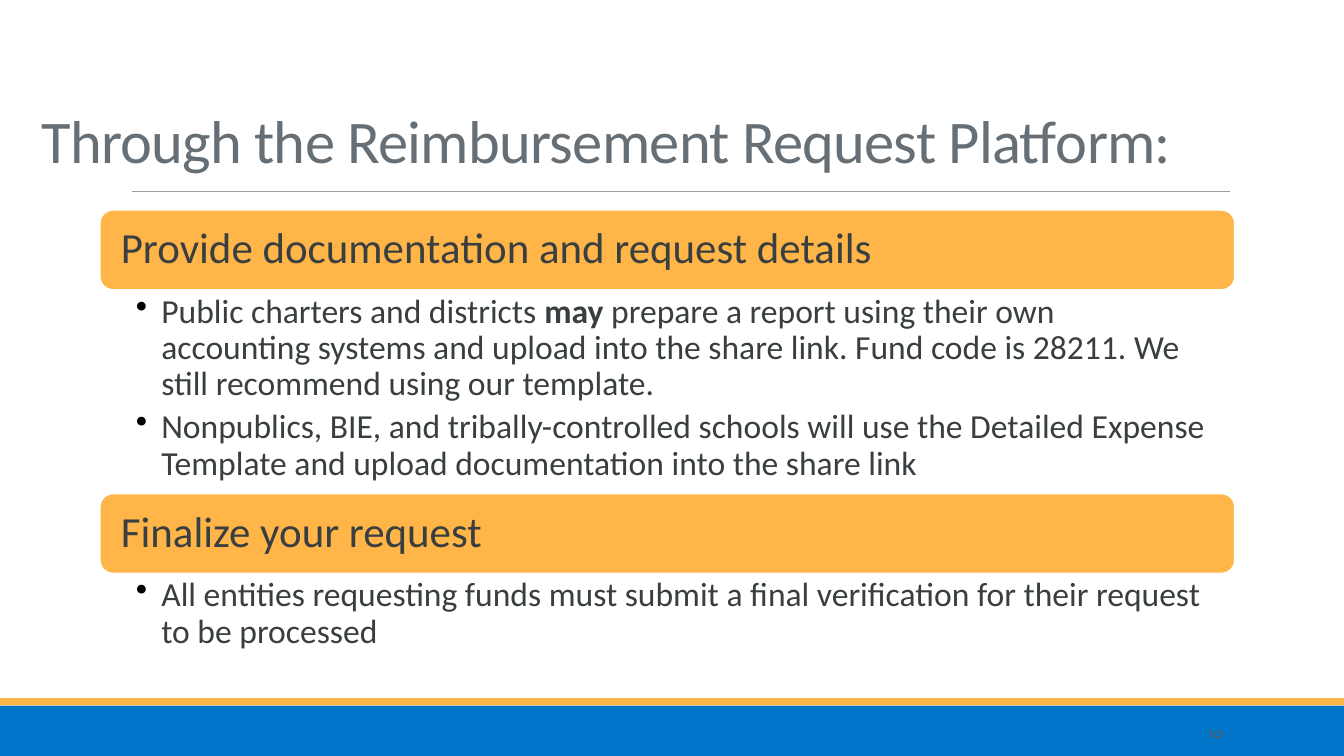
import dataclasses

import lxml.etree
import pptx
import pptx.dml.color
import pptx.enum.shapes
import pptx.enum.text
import pptx.oxml.ns
import pptx.util

SHAPE = pptx.enum.shapes.MSO_SHAPE
ANCHOR = pptx.enum.text.MSO_ANCHOR
ALIGN = pptx.enum.text.PP_ALIGN

# The slide is a grid of square cells, a tenth of an inch each.
COLUMNS, ROWS = 100, 56.25


@dataclasses.dataclass(frozen=True)
class Theme:
    blue: str = "0075C9"
    amber: str = "FFB547"
    white: str = "FFFFFF"
    rule: str = "98A0A4"
    title: str = "666F75"
    text: str = "393E41"
    number: str = "595959"
    bullet: str = "000000"
    font: str = "Calibri"
    number_font: str = "Vollkorn"
    title_size: float = 32.4
    heading_size: float = 23
    body_size: float = 18
    number_size: float = 8.2


THEME = Theme()

PANEL_LEFT, PANEL_WIDTH, HEADING_HEIGHT = 7.4, 84.5, 6

# Heading, top row, height of the bullet area, bullets as (text, bold) spans.
SECTIONS = [
    ("Provide documentation and request details", 15.6, 15.1, [
        [("Public charters and districts ", False),
         ("may ", True),
         ("prepare a report using their own accounting systems and upload into "
          "the share link. Fund code is 28211. We still recommend using our "
          "template.", False)],
        [("Nonpublics, BIE, and tribally-controlled schools will use the "
          "Detailed Expense Template and upload documentation into the share "
          "link", False)],
    ]),
    ("Finalize your request", 36.7, 6.2, [
        [("All entities requesting funds must submit a final verification for "
          "their request to be processed", False)],
    ]),
]


def cells(*counts):
    return [pptx.util.Inches(count / 10) for count in counts]


def rgb(value):
    return pptx.dml.color.RGBColor.from_string(value)


def add_block(page, kind, area, fill, outline=None):
    block = page.shapes.add_shape(kind, *cells(*area))
    block.shadow.inherit = False
    block.fill.solid()
    block.fill.fore_color.rgb = rgb(fill)
    if outline:
        block.line.color.rgb = rgb(outline)
        block.line.width = pptx.util.Pt(1.25)
    else:
        block.line.fill.background()
    return block


def add_rule(page, left, right, row):
    rule = page.shapes.add_connector(
        pptx.enum.shapes.MSO_CONNECTOR.STRAIGHT, *cells(left, row, right, row))
    rule.line.color.rgb = rgb(THEME.rule)
    rule.line.width = pptx.util.Pt(0.5)
    lxml.etree.SubElement(rule._element.spPr, pptx.oxml.ns.qn("a:effectLst"))


def set_frame(box, anchor, insets=(1, 0.5, 1, 0.5)):
    """Wrap the text and set its anchor and left, top, right, bottom insets."""
    frame = box.text_frame
    frame.word_wrap = True
    frame.vertical_anchor = anchor
    (frame.margin_left, frame.margin_top,
     frame.margin_right, frame.margin_bottom) = cells(*insets)
    return frame


def add_span(para, text, size, color, font=THEME.font, bold=False):
    span = para.add_run()
    span.text = text
    span.font.size = pptx.util.Pt(size)
    span.font.name = font
    span.font.bold = bold
    span.font.color.rgb = rgb(color)
    return span


def add_bullet(para):
    properties = para._p.get_or_add_pPr()
    indent = pptx.util.Inches(0.19)
    properties.set("marL", str(indent))
    properties.set("indent", str(-indent))
    color = lxml.etree.SubElement(properties, pptx.oxml.ns.qn("a:buClr"))
    lxml.etree.SubElement(color, pptx.oxml.ns.qn("a:srgbClr"), val=THEME.bullet)
    lxml.etree.SubElement(properties, pptx.oxml.ns.qn("a:buChar"), char="•")


def add_title(page, text):
    box = page.shapes.add_textbox(*cells(2.1, 5.1, 87.8, 8.5))
    para = set_frame(box, ANCHOR.BOTTOM).paragraphs[0]
    para.line_spacing = 0.85
    span = add_span(para, text, THEME.title_size, THEME.title)
    span.font._element.set("spc", "-40")


def add_page_number(page, number):
    box = page.shapes.add_textbox(*cells(81.2, 53, 10.8, 3))
    para = set_frame(box, ANCHOR.MIDDLE).paragraphs[0]
    para.alignment = ALIGN.RIGHT
    add_span(para, number, THEME.number_size, THEME.number, THEME.number_font)


def add_heading(page, text, top):
    area = (PANEL_LEFT, top, PANEL_WIDTH, HEADING_HEIGHT)
    block = add_block(page, SHAPE.ROUNDED_RECTANGLE, area, THEME.amber, THEME.white)
    para = set_frame(block, ANCHOR.MIDDLE, (1.3, 1, 1.3, 1)).paragraphs[0]
    para.alignment = ALIGN.LEFT
    para.line_spacing = 0.9
    add_span(para, text, THEME.heading_size, THEME.text)


def add_bullets(page, bullets, top, height):
    box = page.shapes.add_textbox(*cells(PANEL_LEFT, top, PANEL_WIDTH, height))
    frame = set_frame(box, ANCHOR.TOP, (2.7, 0.3, 1.8, 0.3))
    for index, spans in enumerate(bullets):
        para = frame.add_paragraph() if index else frame.paragraphs[0]
        para.level = 1
        para.line_spacing = 0.9
        para.space_after = pptx.util.Pt(0.2 * THEME.body_size)
        add_bullet(para)
        for text, bold in spans:
            add_span(para, text, THEME.body_size, THEME.text, bold=bold)


def main():
    deck = pptx.Presentation()
    deck.slide_width, deck.slide_height = cells(COLUMNS, ROWS)
    page = deck.slides.add_slide(deck.slide_layouts[6])

    add_block(page, SHAPE.RECTANGLE, (0, 52.5, COLUMNS, ROWS - 52.5), THEME.blue)
    add_block(page, SHAPE.RECTANGLE, (0, 51.95, COLUMNS, 0.55), THEME.amber)
    add_rule(page, 9.8, 91.5, 14.25)
    add_title(page, "Through the Reimbursement Request Platform:")
    add_page_number(page, "10")
    for heading, top, height, bullets in SECTIONS:
        add_heading(page, heading, top)
        add_bullets(page, bullets, top + HEADING_HEIGHT, height)

    deck.save("out.pptx")


if __name__ == "__main__":
    main()
